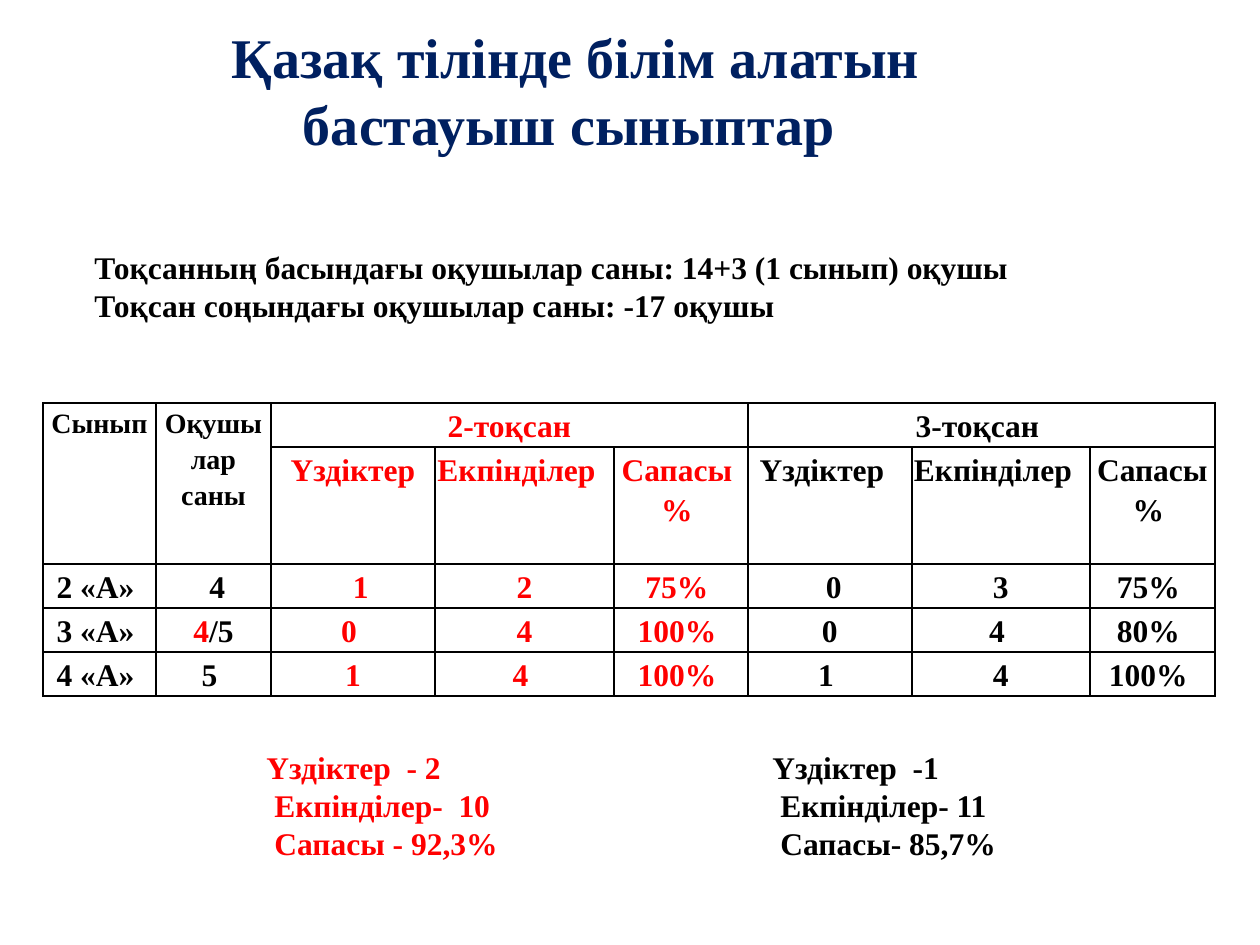
from lxml import etree
from pptx import Presentation
from pptx.dml.color import RGBColor
from pptx.enum.text import MSO_AUTO_SIZE, PP_ALIGN
from pptx.oxml.ns import qn
from pptx.util import Emu, Pt

PX = 914400 // 126
FONT = "Times New Roman"
BLACK = RGBColor(0x00, 0x00, 0x00)
RED = RGBColor(0xFF, 0x00, 0x00)
NAVY = RGBColor(0x00, 0x20, 0x60)
CENTER = PP_ALIGN.CENTER
NO_AUTOSIZE = MSO_AUTO_SIZE.NONE

COLUMN_WIDTHS = [113, 115, 164, 179, 134, 164, 178, 125]
ROW_HEIGHTS = [44, 117, 44, 44, 44]
TERM_2_COLUMNS = range(2, 5)
MERGES = [((0, 0), (1, 0)), ((0, 1), (1, 1)), ((0, 2), (0, 4)), ((0, 5), (0, 7))]
ROWS = [
    ["Сынып", "Оқушылар саны", "2-тоқсан", None, None, "3-тоқсан ", None, None],
    [None, None, "Үздіктер", "Екпінділер  ", "Сапасы  % ",
     "Үздіктер  ", "Екпінділер  ", "Сапасы % "],
    ["2 «А» ", " 4", "  1", "2", "75% ", " 0", "3", "75% "],
    ["3 «А» ", [("4", RED), ("/5", BLACK)], "0 ", "4", "100% ", "0", "4 ", "80% "],
    ["4 «А» ", "5 ", "1", "4 ", "100% ", "1 ", "4", "100% "],
]
SUMMARY = [
    ("Үздіктер  - 2", "Үздіктер  -1", 0),
    ("Екпінділер-  10", "Екпінділер- 11", 8),
    ("Сапасы - 92,3%", "Сапасы- 85,7%", 8),
]
SUMMARY_TABS = [182, 688]


def px(length):
    return Emu(length * PX)


def add_runs(paragraph, runs, size):
    """Add bold runs given as (text, colour) pairs."""
    for text, color in runs:
        run = paragraph.add_run()
        run.text = text
        run.font.name = FONT
        run.font.size = Pt(size)
        run.font.bold = True
        run.font.color.rgb = color


def add_text(slide, box, paragraphs, size, align=None):
    """Add a text box with one list of runs per paragraph."""
    frame = slide.shapes.add_textbox(*map(px, box)).text_frame
    frame.word_wrap = True
    frame.auto_size = NO_AUTOSIZE
    for index, runs in enumerate(paragraphs):
        paragraph = frame.add_paragraph() if index else frame.paragraphs[0]
        paragraph.alignment = align
        add_runs(paragraph, runs, size)
    return frame


def set_tabs(paragraph, positions):
    tab_list = etree.SubElement(paragraph._p.get_or_add_pPr(), qn("a:tabLst"))
    for position in positions:
        etree.SubElement(tab_list, qn("a:tab"), pos=str(px(position)), algn="l")


def add_borders(cell):
    properties = cell._tc.get_or_add_tcPr()
    for side in ("a:lnL", "a:lnR", "a:lnT", "a:lnB"):
        line = etree.SubElement(properties, qn(side), w=str(Pt(1)))
        fill = etree.SubElement(line, qn("a:solidFill"))
        etree.SubElement(fill, qn("a:srgbClr"), val=str(BLACK))


def fill_cell(cell, content, color, size):
    cell.margin_left = cell.margin_right = px(2)
    cell.margin_top = px(1)
    cell.margin_bottom = 0
    add_borders(cell)
    cell.fill.background()
    if content is None:
        return
    paragraph = cell.text_frame.paragraphs[0]
    paragraph.alignment = CENTER
    paragraph.line_spacing = 1.15
    runs = [(content, color)] if isinstance(content, str) else content
    add_runs(paragraph, runs, size)


def add_results_table(slide):
    frame = slide.shapes.add_table(
        len(ROW_HEIGHTS), len(COLUMN_WIDTHS), px(43), px(403),
        px(sum(COLUMN_WIDTHS)), px(sum(ROW_HEIGHTS)))
    table = frame.table
    table.first_row = table.horz_banding = False
    for column, width in zip(table.columns, COLUMN_WIDTHS):
        column.width = px(width)
    for row, height in zip(table.rows, ROW_HEIGHTS):
        row.height = px(height)
    for start, end in MERGES:
        table.cell(*start).merge(table.cell(*end))
    for r, contents in enumerate(ROWS):
        for c, content in enumerate(contents):
            color = RED if c in TERM_2_COLUMNS else BLACK
            size = 16 if r == 0 and c < 2 else 18
            fill_cell(table.cell(r, c), content, color, size)


def add_summary(slide):
    """Put both terms' totals in two tabbed columns."""
    lines = [[("\t" + term_2, RED), ("\t" + term_3, BLACK)]
             for term_2, term_3, _ in SUMMARY]
    frame = add_text(slide, (72, 742, 1142, 165), lines, 18)
    for paragraph, (_, _, shift) in zip(frame.paragraphs, SUMMARY):
        set_tabs(paragraph, [tab + shift for tab in SUMMARY_TABS])


def main():
    presentation = Presentation()
    presentation.slide_width = px(1260)
    presentation.slide_height = px(945)
    slide = presentation.slides.add_slide(presentation.slide_layouts[6])

    add_text(slide, (82, 242, 1092, 89), [
        [("Тоқсанның басындағы оқушылар саны: 14+3 (1 сынып) оқушы", BLACK)],
        [("Тоқсан соңындағы оқушылар саны: -17 оқушы", BLACK)],
    ], 18)
    add_summary(slide)
    add_results_table(slide)
    add_text(slide, (105, 16, 942, 149),
             [[("Қазақ тілінде білім алатын бастауыш сыныптар ", NAVY)]], 32, CENTER)

    presentation.save("out.pptx")


if __name__ == "__main__":
    main()
